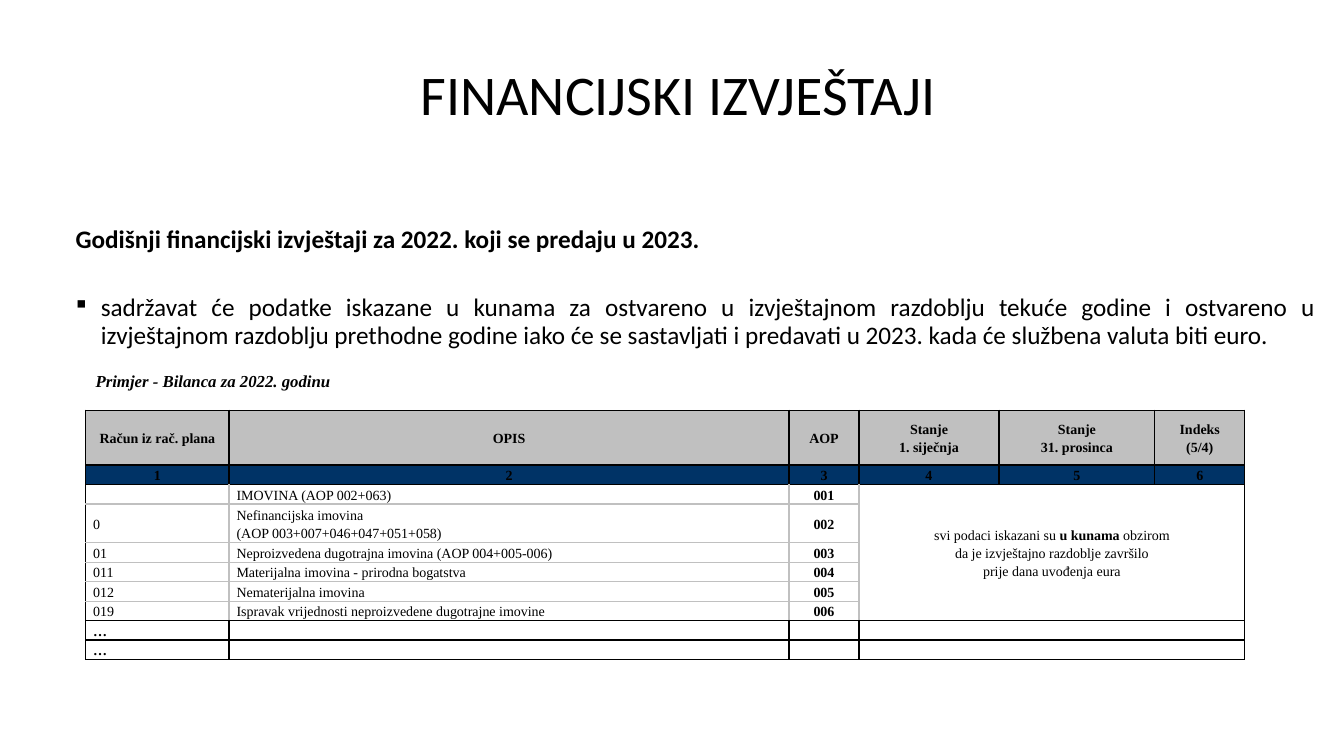
from dataclasses import dataclass
from typing import Any

import lxml.etree
import pptx
import pptx.dml.color
import pptx.enum.text
import pptx.oxml.ns
import pptx.util

Pt = pptx.util.Pt
Align = pptx.enum.text.PP_ALIGN
Anchor = pptx.enum.text.MSO_ANCHOR
qn = pptx.oxml.ns.qn

BLACK = pptx.dml.color.RGBColor(0x00, 0x00, 0x00)
SILVER = pptx.dml.color.RGBColor(0xC0, 0xC0, 0xC0)
NAVY = pptx.dml.color.RGBColor(0x00, 0x33, 0x66)

TITLE_FONT = {"name": "Calibri", "size": Pt(40), "bold": False}
BODY_FONT = {"name": "Calibri", "size": Pt(18)}
CAPTION_FONT = {"name": "Times New Roman", "size": Pt(12), "bold": True, "italic": True}
TABLE_FONT = {"name": "Times New Roman", "size": Pt(10)}
CELL_FORMAT = {
    "margin_left": Pt(5.4), "margin_right": Pt(5.4),
    "margin_top": 0, "margin_bottom": 0, "vertical_anchor": Anchor.MIDDLE,
}

COLUMN_WIDTHS = (102.4, 400, 50, 100, 111.3, 64.3)
HEADER_HEIGHT, LINE_HEIGHT = 39.2, 13.9
HEADER_ROWS, FIRST_OPEN_ROW = 2, 8


@dataclass(frozen=True)
class Span:
    text: str
    bold: bool = False


@dataclass(frozen=True)
class Entry:
    account: str
    description: str
    aop: str


HEADINGS = ("Račun iz rač. plana", "OPIS", "AOP", "Stanje\n1. siječnja",
            "Stanje\n31. prosinca", "Indeks\n(5/4)")
ENTRIES = (
    Entry("", "IMOVINA (AOP 002+063)", "001"),
    Entry("0", "Nefinancijska imovina\n(AOP 003+007+046+047+051+058)", "002"),
    Entry("01", "Neproizvedena dugotrajna imovina (AOP 004+005-006)", "003"),
    Entry("011", "Materijalna imovina - prirodna bogatstva", "004"),
    Entry("012", "Nematerijalna imovina", "005"),
    Entry("019", "Ispravak vrijednosti neproizvedene dugotrajne imovine", "006"),
    Entry("…", "", ""),
    Entry("…", "", ""),
)
CURRENCY_NOTE = [
    [Span("svi podaci iskazani su "), Span("u kunama ", True), Span("obzirom")],
    [Span("da je izvještajno razdoblje završilo")],
    [Span("prije dana uvođenja eura")],
]


def apply_format(target: Any, values: dict[str, Any]) -> None:
    for key, value in values.items():
        setattr(target, key, value)


def add_span(paragraph: Any, span: Span, font: dict[str, Any]) -> None:
    run = paragraph.add_run()
    run.text = span.text
    apply_format(run.font, {"bold": span.bold, **font})
    run.font.color.rgb = BLACK


def lines_of(text: str, bold: bool = False) -> list[list[Span]]:
    return [[Span(line, bold)] for line in text.split("\n")] if text else [[]]


def fill_cell(cell: Any, lines: list[list[Span]], align: Any) -> None:
    apply_format(cell, CELL_FORMAT)
    frame = cell.text_frame
    for index, spans in enumerate(lines):
        paragraph = frame.add_paragraph() if index else frame.paragraphs[0]
        apply_format(paragraph, {"alignment": align, "line_spacing": 1.15})
        for span in spans:
            add_span(paragraph, span, TABLE_FONT)
        if not spans:
            lxml.etree.SubElement(paragraph._p, qn("a:endParaRPr"), sz="1000")


def draw_borders(cell: Any, row: int, column: int) -> None:
    bottom = row + (cell.span_height if cell.is_merge_origin else 1)
    right = column + (cell.span_width if cell.is_merge_origin else 1)
    inked_row = row < HEADER_ROWS or row >= FIRST_OPEN_ROW
    edges = {
        "a:lnL": inked_row or column == 0,
        "a:lnR": inked_row or right == len(COLUMN_WIDTHS),
        "a:lnT": row <= HEADER_ROWS or row >= FIRST_OPEN_ROW,
        "a:lnB": bottom <= HEADER_ROWS or bottom >= FIRST_OPEN_ROW,
    }
    properties = cell._tc.get_or_add_tcPr()
    for position, (tag, inked) in enumerate(edges.items()):
        line = lxml.etree.Element(qn(tag), w=str(Pt(1)))
        solid = lxml.etree.SubElement(line, qn("a:solidFill"))
        lxml.etree.SubElement(solid, qn("a:srgbClr"), val=str(BLACK if inked else SILVER))
        properties.insert(position, line)


def add_title(slide: Any) -> None:
    title = slide.shapes.title
    apply_format(title, {"left": Pt(130.3), "top": Pt(16.6), "width": Pt(708.5), "height": Pt(105.8)})
    title.text_frame.vertical_anchor = Anchor.MIDDLE
    paragraph = title.text_frame.paragraphs[0]
    apply_format(paragraph, {"alignment": Align.CENTER, "line_spacing": 0.9})
    add_span(paragraph, Span("FINANCIJSKI IZVJEŠTAJI"), TITLE_FONT)


def add_body(slide: Any) -> None:
    body = slide.placeholders[1]
    apply_format(body, {"left": Pt(10.8), "top": Pt(133.2), "width": Pt(936), "height": Pt(374.4)})
    frame = body.text_frame
    apply_format(frame, {"margin_top": Pt(28.4), "vertical_anchor": Anchor.TOP,
                         "auto_size": pptx.enum.text.MSO_AUTO_SIZE.NONE})
    heading, statement = frame.paragraphs[0], frame.add_paragraph()
    for paragraph, gap, left, indent in ((heading, 0, 36, 0), (statement, 29.8, 54, -18)):
        apply_format(paragraph, {"level": 1, "alignment": Align.JUSTIFY,
                                 "line_spacing": 0.9, "space_before": Pt(gap)})
        properties = paragraph._p.get_or_add_pPr()
        properties.set("marL", str(Pt(left)))
        properties.set("indent", str(Pt(indent)))
    lxml.etree.SubElement(heading._p.pPr, qn("a:buNone"))
    lxml.etree.SubElement(statement._p.pPr, qn("a:buFont"), typeface="Wingdings")
    lxml.etree.SubElement(statement._p.pPr, qn("a:buChar"), char="§")
    add_span(heading, Span("Godišnji financijski izvještaji za 2022. koji se predaju u 2023.", True), BODY_FONT)
    add_span(statement, Span(
        "sadržavat će podatke iskazane u kunama za ostvareno u izvještajnom razdoblju "
        "tekuće godine i ostvareno u izvještajnom razdoblju prethodne godine iako će se "
        "sastavljati i predavati u 2023. kada će službena valuta biti euro."), BODY_FONT)


def add_caption(slide: Any) -> None:
    caption = slide.shapes.add_textbox(Pt(61.2), Pt(261.4), Pt(182.9), Pt(21.6))
    caption.text_frame.word_wrap = True
    caption.text_frame.auto_size = pptx.enum.text.MSO_AUTO_SIZE.SHAPE_TO_FIT_TEXT
    add_span(caption.text_frame.paragraphs[0], Span("Primjer - Bilanca za 2022. godinu", True), CAPTION_FONT)


def add_balance_sheet(slide: Any) -> None:
    heights = [HEADER_HEIGHT, LINE_HEIGHT] + [
        LINE_HEIGHT * len(lines_of(entry.description)) for entry in ENTRIES]
    balance = slide.shapes.add_table(
        len(heights), len(COLUMN_WIDTHS), Pt(61.2), Pt(293),
        Pt(sum(COLUMN_WIDTHS)), Pt(sum(heights))).table
    apply_format(balance, {"first_row": False, "horz_banding": False})
    for column, width in zip(balance.columns, COLUMN_WIDTHS):
        column.width = Pt(width)
    for row, height in zip(balance.rows, heights):
        row.height = Pt(height)

    for column, heading in enumerate(HEADINGS):
        fill_cell(balance.cell(0, column), lines_of(heading, True), Align.CENTER)
        fill_cell(balance.cell(1, column), lines_of(str(column + 1), True), Align.CENTER)
    for row, entry in enumerate(ENTRIES, HEADER_ROWS):
        fill_cell(balance.cell(row, 0), lines_of(entry.account, row >= FIRST_OPEN_ROW), Align.LEFT)
        fill_cell(balance.cell(row, 1), lines_of(entry.description), Align.LEFT)
        fill_cell(balance.cell(row, 2), lines_of(entry.aop, True), Align.CENTER)
        for column in range(3, len(COLUMN_WIDTHS)):
            noted = (row, column) == (HEADER_ROWS, 3)
            fill_cell(balance.cell(row, column), CURRENCY_NOTE if noted else [[]], Align.CENTER)

    for first, last in ((HEADER_ROWS, FIRST_OPEN_ROW - 1), (8, 8), (9, 9)):
        balance.cell(first, 3).merge(balance.cell(last, 5))
    for row in range(len(heights)):
        for column in range(len(COLUMN_WIDTHS)):
            cell = balance.cell(row, column)
            if row < HEADER_ROWS:
                cell.fill.solid()
                cell.fill.fore_color.rgb = (SILVER, NAVY)[row]
            else:
                cell.fill.background()
            draw_borders(cell, row, column)


def main() -> None:
    deck = pptx.Presentation()
    apply_format(deck, {"slide_width": Pt(960), "slide_height": Pt(540)})
    slide = deck.slides.add_slide(deck.slide_layouts[1])
    for add_part in (add_title, add_body, add_caption, add_balance_sheet):
        add_part(slide)
    deck.save("out.pptx")


if __name__ == "__main__":
    main()
